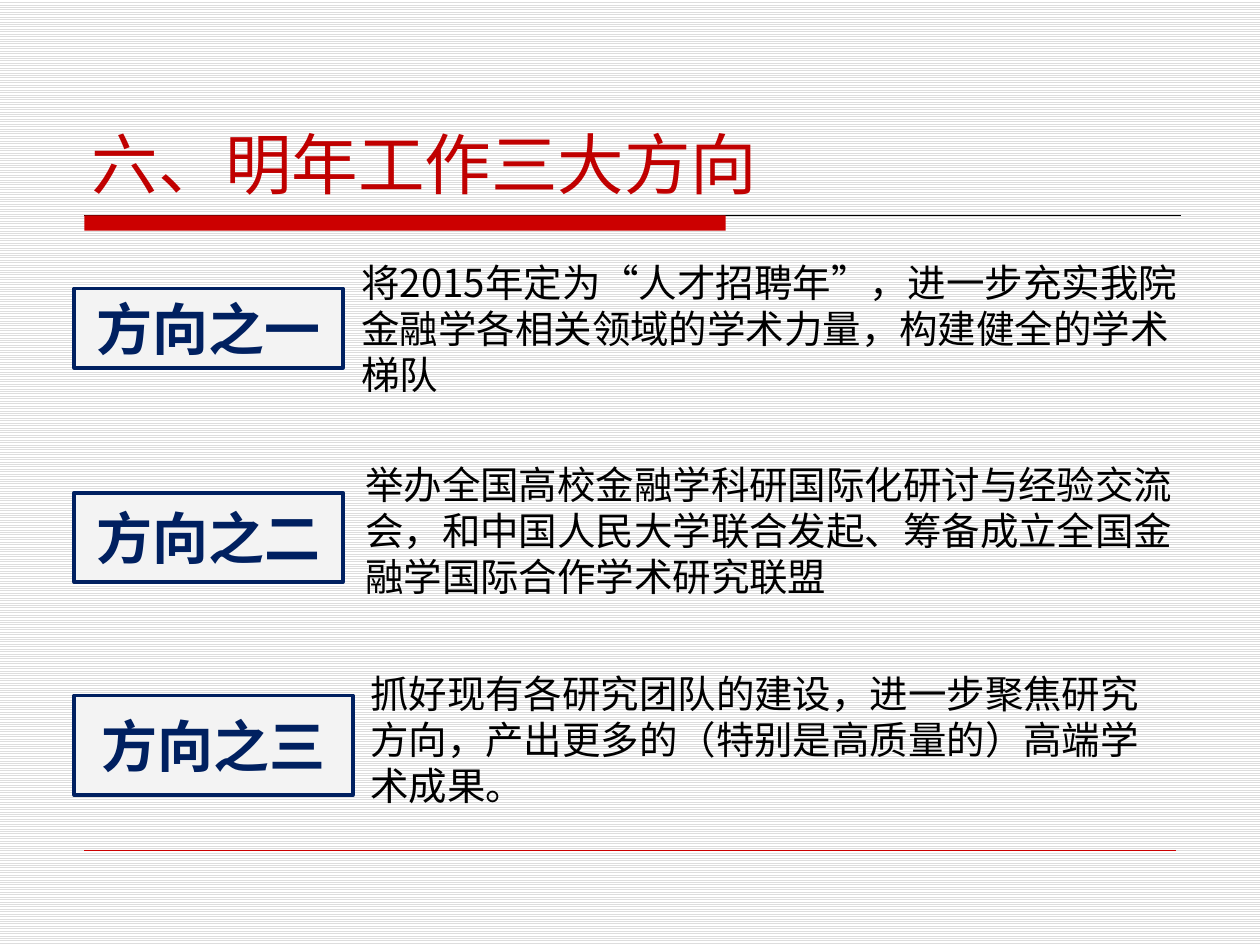
from dataclasses import dataclass

from lxml import etree
from pptx import Presentation
from pptx.dml.color import RGBColor
from pptx.enum.dml import MSO_PATTERN
from pptx.enum.shapes import MSO_CONNECTOR, MSO_SHAPE
from pptx.enum.text import MSO_ANCHOR, PP_ALIGN
from pptx.oxml.ns import qn
from pptx.util import Inches, Pt

RECT = MSO_SHAPE.RECTANGLE
STRAIGHT = MSO_CONNECTOR.STRAIGHT
STRIPES = MSO_PATTERN.LIGHT_HORIZONTAL
MIDDLE, BOTTOM = MSO_ANCHOR.MIDDLE, MSO_ANCHOR.BOTTOM
LEFT, CENTER = PP_ALIGN.LEFT, PP_ALIGN.CENTER
FONT = "Noto Sans CJK SC"
RED, NAVY, BLACK = "CC0000", "002060", "000000"
EDGE = 0.67


@dataclass
class Box:
    left: float
    top: float
    width: float
    height: float

    def emu(self) -> list[int]:
        return [Inches(n) for n in (self.left, self.top, self.width, self.height)]


@dataclass
class Goal:
    label: str
    frame: Box
    text: str
    body: Box


GOALS = [
    Goal("方向之一", Box(0.59, 2.29, 2.13, 0.63),
         "将2015年定为“人才招聘年”，进一步充实我院金融学各相关领域的学术力量，构建健全的学术梯队",
         Box(2.77, 2.29, 6.72, 0.63)),
    Goal("方向之二", Box(0.59, 3.91, 2.13, 0.71),
         "举办全国高校金融学科研国际化研讨与经验交流会，和中国人民大学联合发起、筹备成立全国金融学国际合作学术研究联盟",
         Box(2.8, 3.99, 6.61, 0.44)),
    Goal("方向之三", Box(0.59, 5.52, 2.21, 0.79),
         "抓好现有各研究团队的建设，进一步聚焦研究方向，产出更多的（特别是高质量的）高端学术成果。",
         Box(2.84, 5.55, 6.57, 0.63)),
]
TITLE = {"size": Pt(38), "bold": False}
LABEL = {"size": Pt(32), "bold": True}
BODY = {"size": Pt(22), "bold": False}


def color(code: str) -> RGBColor:
    return RGBColor.from_string(code)


def write(shape, text: str, style: dict, tint: str, align=LEFT, anchor=MIDDLE):
    frame = shape.text_frame
    frame.word_wrap = True
    frame.vertical_anchor = anchor
    para = frame.paragraphs[0]
    para.alignment = align
    run = para.add_run()
    run.text = text
    for key, value in {"name": FONT, **style}.items():
        setattr(run.font, key, value)
    run.font.color.rgb = color(tint)
    east = etree.SubElement(run.font._element, qn("a:ea"))
    east.set("typeface", FONT)
    return para


def block(slide, box: Box, fill: str):
    shape = slide.shapes.add_shape(RECT, *box.emu())
    shape.shadow.inherit = False
    shape.fill.solid()
    shape.fill.fore_color.rgb = color(fill)
    return shape


def rule(slide, start: float, end: float, top: float, tint: str, width: float) -> None:
    line = slide.shapes.add_connector(
        STRAIGHT, Inches(start), Inches(top), Inches(end), Inches(top))
    line.line.color.rgb = color(tint)
    line.line.width = Pt(width)
    etree.SubElement(line._element.spPr, qn("a:effectLst"))


def draw(slide, goal: Goal) -> None:
    body = slide.shapes.add_textbox(*goal.body.emu())
    write(body, goal.text, BODY, BLACK).line_spacing = Pt(26.3)
    label = block(slide, goal.frame, "F3F3F3")
    label.line.color.rgb = color(NAVY)
    label.line.width = Pt(2.25)
    write(label, goal.label, LABEL, NAVY, CENTER)


def main() -> None:
    deck = Presentation()
    deck.slide_width, deck.slide_height = Inches(10), Inches(7.5)
    slide = deck.slides.add_slide(deck.slide_layouts[5])
    back = slide.background.fill
    back.patterned()
    back.pattern = STRIPES
    back.fore_color.rgb = color("DDDDDD")
    back.back_color.rgb = color("FFFFFF")

    rule(slide, EDGE, 9.37, 1.71, BLACK, 0.75)
    block(slide, Box(EDGE, 1.71, 5.09, 0.12), RED).line.fill.background()
    rule(slide, EDGE, 9.33, 6.75, RED, 0.25)

    title = slide.shapes.title
    title.left, title.top, title.width, title.height = Box(0.63, 0.33, 8.75, 1.33).emu()
    write(title, "六、明年工作三大方向", TITLE, "C00000", anchor=BOTTOM)
    for goal in GOALS:
        draw(slide, goal)
    deck.save("out.pptx")


if __name__ == "__main__":
    main()
